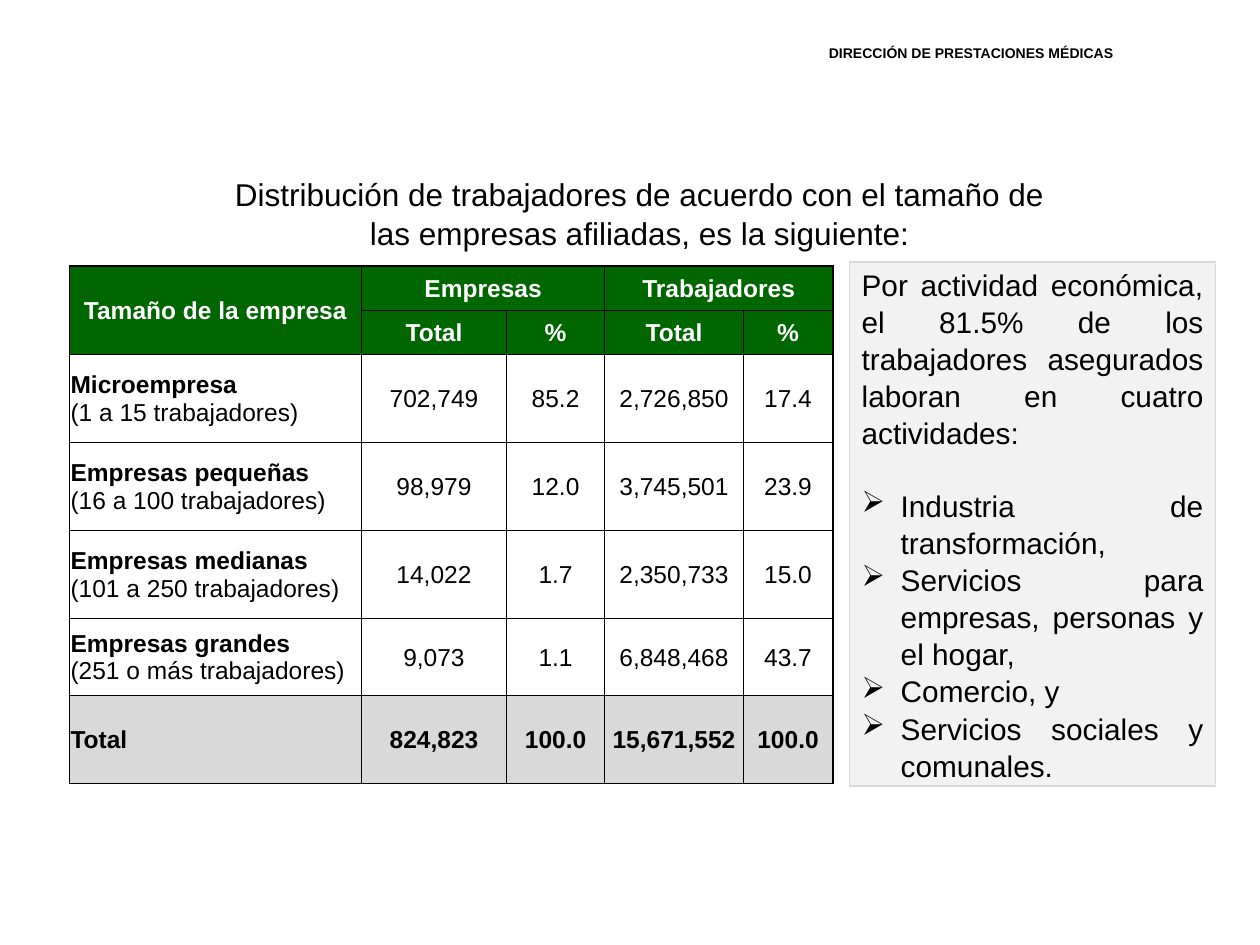
from lxml import etree
from pptx import Presentation
from pptx.dml.color import RGBColor
from pptx.enum.shapes import MSO_SHAPE
from pptx.enum.text import MSO_ANCHOR, PP_ALIGN
from pptx.oxml.ns import qn
from pptx.util import Inches, Pt

LEFT, CENTER, JUSTIFY = PP_ALIGN.LEFT, PP_ALIGN.CENTER, PP_ALIGN.JUSTIFY
MIDDLE, TOP = MSO_ANCHOR.MIDDLE, MSO_ANCHOR.TOP
RECTANGLE = MSO_SHAPE.RECTANGLE
BLACK, WHITE, GREEN, GREY, PALE = "000000", "FFFFFF", "006600", "D9D9D9", "F2F2F2"
LINE_SPACING = 1.045

HEADER = "DIRECCIÓN DE PRESTACIONES MÉDICAS"
TITLE = ("Distribución de trabajadores de acuerdo con el tamaño de "
         "las empresas afiliadas, es la siguiente:")
HEADINGS = [
    ["Tamaño de la empresa", "Empresas", "", "Trabajadores", ""],
    ["", "Total", "%", "Total", "%"],
]
COMPANIES = [
    [("Microempresa", "(1 a 15 trabajadores)"), "702,749", "85.2", "2,726,850", "17.4"],
    [("Empresas pequeñas", "(16 a 100 trabajadores)"), "98,979", "12.0", "3,745,501", "23.9"],
    [("Empresas medianas", "(101 a 250 trabajadores)"), "14,022", "1.7", "2,350,733", "15.0"],
    [("Empresas grandes", "(251 o más trabajadores)"), "9,073", "1.1", "6,848,468", "43.7"],
]
TOTALS = ["Total", "824,823", "100.0", "15,671,552", "100.0"]
COLUMN_WIDTHS = [2.32, 1.15, 0.78, 1.1, 0.71]
ROW_HEIGHTS = [0.35, 0.35, 0.7, 0.7, 0.7, 0.61, 0.7]
MERGES = [((0, 0), (1, 0)), ((0, 1), (0, 2)), ((0, 3), (0, 4))]

ACTIVITY_INTRO = ("Por actividad económica, el 81.5% de los trabajadores asegurados "
                  "laboran en cuatro actividades:")
ACTIVITIES = ["Industria de transformación,", "Servicios para empresas, personas y el hogar,",
              "Comercio, y", "Servicios sociales y comunales."]


def color(value):
    return RGBColor.from_string(value)


def style(paragraph, size, align=LEFT, bold=False, ink=BLACK):
    paragraph.alignment = align
    font = paragraph.font
    font.name, font.size, font.bold = "Arial", Pt(size), bold
    font.color.rgb = color(ink)


def add_text(slide, box, text, size, align, anchor, bold=False):
    frame = slide.shapes.add_textbox(*map(Inches, box)).text_frame
    frame.word_wrap = True
    frame.vertical_anchor = anchor
    paragraph = frame.paragraphs[0]
    paragraph.text = text
    paragraph.line_spacing = LINE_SPACING
    style(paragraph, size, align, bold)


def add_borders(cell, outer_sides):
    """Draw thin borders, thicker on the sides that lie on the table's edge."""
    properties = cell._tc.get_or_add_tcPr()
    for side in "LRTB":
        width = Pt(1) if side in outer_sides else Pt(0.5)
        line = etree.SubElement(properties, qn("a:ln" + side), w=str(width))
        fill = etree.SubElement(line, qn("a:solidFill"))
        etree.SubElement(fill, qn("a:srgbClr"), val=BLACK)


def fill_cell(cell, content, align, bold, ink, fill):
    cell.vertical_anchor = MIDDLE
    cell.margin_left = cell.margin_right = cell.margin_top = Inches(0.01)
    cell.margin_bottom = 0
    if fill:
        cell.fill.solid()
        cell.fill.fore_color.rgb = color(fill)
    else:
        cell.fill.background()
    paragraph = cell.text_frame.paragraphs[0]
    if isinstance(content, tuple):
        name, size_range = content
        name_run = paragraph.add_run()
        name_run.text = name
        name_run.font.bold = True
        paragraph.add_line_break()
        paragraph.add_run().text = size_range
    else:
        paragraph.text = content
    style(paragraph, 14, align, bold, ink)


def add_company_table(slide, left, top):
    rows = HEADINGS + COMPANIES + [TOTALS]
    last_row, last_column = len(rows) - 1, len(COLUMN_WIDTHS) - 1
    table = slide.shapes.add_table(
        len(rows), len(COLUMN_WIDTHS), Inches(left), Inches(top),
        Inches(sum(COLUMN_WIDTHS)), Inches(sum(ROW_HEIGHTS))).table
    table.first_row = table.horz_banding = False
    for column, width in zip(table.columns, COLUMN_WIDTHS):
        column.width = Inches(width)
    for row, height in zip(table.rows, ROW_HEIGHTS):
        row.height = Inches(height)
    for start, end in MERGES:
        table.cell(*start).merge(table.cell(*end))

    for r, row in enumerate(rows):
        heading, total = r < len(HEADINGS), r == last_row
        fill = GREEN if heading else GREY if total else None
        for c, content in enumerate(row):
            cell = table.cell(r, c)
            right = c + (cell.span_width if cell.is_merge_origin else 1) - 1
            edges = {"L": c == 0, "R": right == last_column, "T": r == 0, "B": total}
            add_borders(cell, [side for side, outer in edges.items() if outer])
            align = CENTER if heading or c else LEFT
            fill_cell(cell, content, align, heading or total, WHITE if heading else BLACK, fill)


def add_bullet(paragraph):
    properties = paragraph._p.get_or_add_pPr()
    indent = Inches(0.31)
    properties.set("marL", str(indent))
    properties.set("indent", str(-indent))
    etree.SubElement(properties, qn("a:buChar"), char="➢")


def add_activity_panel(slide, box):
    panel = slide.shapes.add_shape(RECTANGLE, *map(Inches, box))
    panel.shadow.inherit = False
    panel.fill.solid()
    panel.fill.fore_color.rgb = color(PALE)
    panel.line.color.rgb = color(GREY)
    panel.line.width = Pt(0.75)
    frame = panel.text_frame
    frame.word_wrap = True
    frame.vertical_anchor = MIDDLE
    for number, text in enumerate([ACTIVITY_INTRO] + ACTIVITIES):
        paragraph = frame.add_paragraph() if number else frame.paragraphs[0]
        paragraph.text = text
        paragraph.line_spacing = LINE_SPACING
        if number == 1:
            paragraph.space_before = Pt(20.4)
        if number:
            add_bullet(paragraph)
        style(paragraph, 17, JUSTIFY)


def main():
    presentation = Presentation()
    presentation.slide_width, presentation.slide_height = Inches(10), Inches(7.5)
    slide = presentation.slides.add_slide(presentation.slide_layouts[6])
    add_text(slide, (6.48, 0.3, 2.96, 0.37), HEADER, 8, LEFT, TOP, bold=True)
    add_text(slide, (1.69, 1.33, 6.77, 0.71), TITLE, 18, CENTER, MIDDLE)
    add_company_table(slide, 0.55, 2.11)
    add_activity_panel(slide, (6.74, 2.08, 2.91, 4.16))
    presentation.save("out.pptx")


if __name__ == "__main__":
    main()
